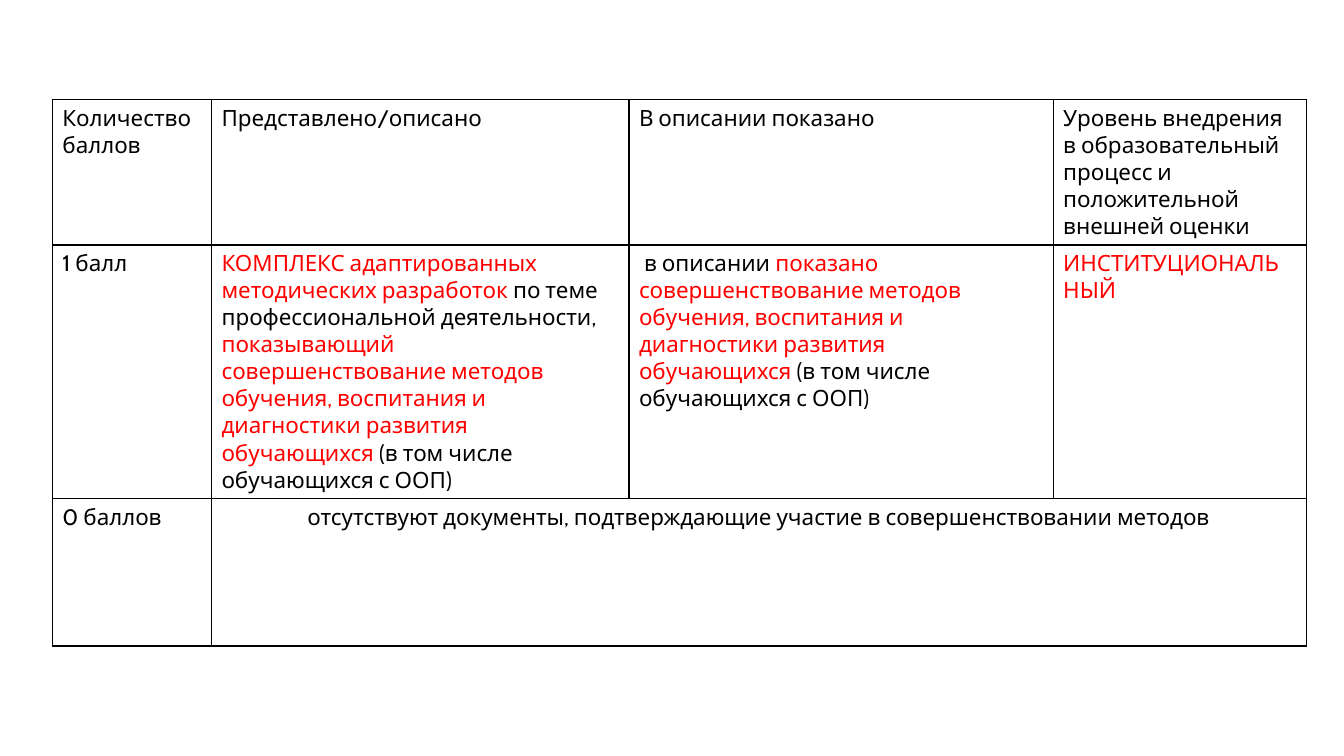
from lxml import etree
from pptx import Presentation
from pptx import util as u
from pptx.dml.color import RGBColor
from pptx.enum import text
from pptx.oxml.ns import qn

COLORS = {"ink": "000000", "accent": "FF0000", "paper": "FFFFFF"}

# Each cell is a list of paragraphs; each paragraph is a list of (text, colour) runs.
HEADERS = [
    "Количество баллов",
    "Представлено/описано",
    "В описании показано",
    "Уровень внедрения в образовательный процесс и положительной внешней оценки",
]
METHODS = "совершенствование методов обучения, воспитания и диагностики развития обучающихся "
LEARNERS = ("(в том числе обучающихся с ООП)", "ink")
ROWS = [
    [[[(header, "ink")]] for header in HEADERS],
    [
        [[("1 балл", "ink")]],
        [[("КОМПЛЕКС адаптированных методических разработок ", "accent"),
          ("по теме профессиональной деятельности, ", "ink"),
          ("показывающий " + METHODS, "accent"),
          LEARNERS]],
        [[(" в описании ", "ink"),
          ("показано " + METHODS, "accent"),
          LEARNERS]],
        [[("ИНСТИТУЦИОНАЛЬ", "accent")], [("НЫЙ", "accent")]],
    ],
    [
        [[("0 баллов", "ink")]],
        [[("отсутствуют документы, подтверждающие участие "
           "в совершенствовании методов", "ink")]],
    ],
]
COLUMN_WIDTHS = [4.01, 10.52, 10.69, 6.38]
ROW_HEIGHTS = [2.06, 4.04, 3.71]


def add_run(p, content, font="Cabin", size=16, color="ink"):
    r = p.add_run()
    r.text = content
    r.font.name = font
    r.font.size = u.Pt(size)
    r.font.color.rgb = RGBColor.from_string(COLORS[color])


class SlideBuilder:
    def __init__(self, prs, border=1):
        self.slide = prs.slides.add_slide(prs.slide_layouts[6])
        self.border = border

    def table(self, left, top, widths, heights):
        frame = self.slide.shapes.add_table(
            len(heights), len(widths), u.Cm(left), u.Cm(top),
            u.Cm(sum(widths)), u.Cm(sum(heights)))
        table = frame.table
        table.first_row = table.horz_banding = False
        for column, width in zip(table.columns, widths):
            column.width = u.Cm(width)
        for row, height in zip(table.rows, heights):
            row.height = u.Cm(height)
        for cell in table.iter_cells():
            self.outline(cell)
            cell.fill.solid()
            cell.fill.fore_color.rgb = RGBColor.from_string(COLORS["paper"])
        return table

    def outline(self, cell):
        """Draw all four borders of a cell."""
        tc_pr = cell._tc.get_or_add_tcPr()
        for side in ("lnL", "lnR", "lnT", "lnB"):
            ln = etree.SubElement(tc_pr, qn("a:" + side), w=str(u.Pt(self.border)))
            fill = etree.SubElement(ln, qn("a:solidFill"))
            etree.SubElement(fill, qn("a:srgbClr"), val=COLORS["ink"])

    def fill_cell(self, cell, paragraphs, align=text.PP_ALIGN.LEFT):
        tf = cell.text_frame
        for i, runs in enumerate(paragraphs):
            p = tf.add_paragraph() if i else tf.paragraphs[0]
            p.alignment = align
            for content, color in runs:
                add_run(p, content, color=color)


def main():
    prs = Presentation()
    prs.slide_width, prs.slide_height = u.Cm(33.87), u.Cm(19.05)
    s = SlideBuilder(prs)
    table = s.table(1.32, 2.51, COLUMN_WIDTHS, ROW_HEIGHTS)
    table.cell(2, 1).merge(table.cell(2, 3))
    for i, row in enumerate(ROWS):
        for j, paragraphs in enumerate(row):
            cell = table.cell(i, j)
            align = text.PP_ALIGN.CENTER if cell.is_merge_origin else text.PP_ALIGN.LEFT
            s.fill_cell(cell, paragraphs, align=align)
    prs.save("out.pptx")


if __name__ == "__main__":
    main()
